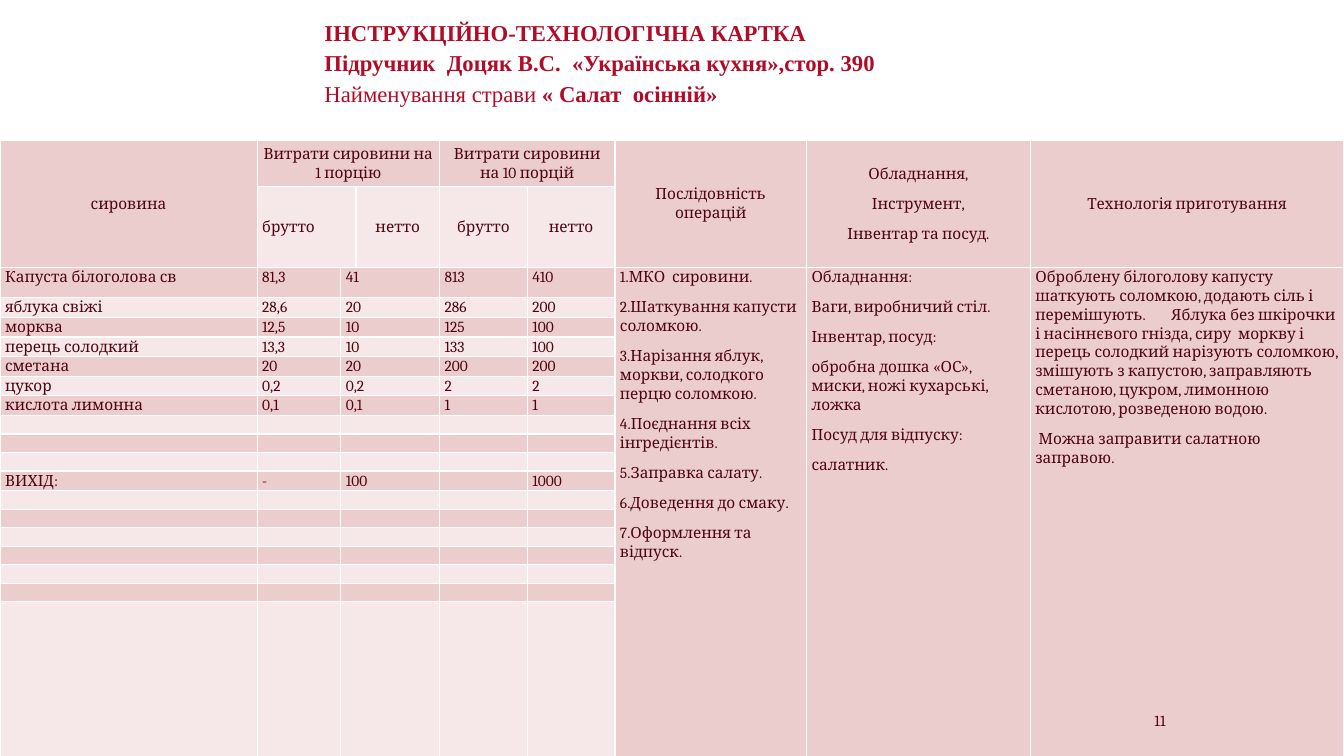
from dataclasses import dataclass

import pptx
import pptx.dml.color
import pptx.enum.text
import pptx.oxml.ns
import pptx.table
import pptx.text.text
import pptx.util
from lxml import etree

Inches = pptx.util.Inches
Pt = pptx.util.Pt
Align = pptx.enum.text.PP_ALIGN
Anchor = pptx.enum.text.MSO_ANCHOR
qn = pptx.oxml.ns.qn


@dataclass(frozen=True)
class Theme:
    title: str = "B10C27"
    ink: str = "4D0511"
    dark: str = "ECCDCD"
    light: str = "F6E8E8"
    line: str = "FFFFFF"
    serif: str = "Times New Roman"
    body: str = "Cambria"
    big: float = 16.2
    small: float = 11


@dataclass(frozen=True)
class Part:
    text: str
    bold: bool = False


@dataclass(frozen=True)
class Head:
    text: str
    row: int
    col: int
    rows: int = 1
    cols: int = 1
    align: Align = Align.CENTER


@dataclass(frozen=True)
class Column:
    col: int
    text: str


THEME = Theme()
WIDTHS = (2.55, 0.83, 0.15, 0.83, 0.87, 0.87, 1.9, 2.22, 3.11)
HEIGHTS = (0.46, 0.78, 0.3) + (0.18,) * 16 + (1.57,)
TAB = 1.35  # gap inside the method text

TITLE = (
    Part("ІНСТРУКЦІЙНО-ТЕХНОЛОГІЧНА КАРТКА\vПідручник  Доцяк В.С.  «Українська кухня»,стор. 390\v", True),
    Part("Найменування страви"),
    Part(" « Салат  осінній»", True),
)

HEADS = (
    Head("сировина", 0, 0, rows=2),
    Head("Витрати сировини на 1 порцію", 0, 1, cols=3),
    Head("Витрати сировини на 10 порцій", 0, 4, cols=2),
    Head("Послідовність операцій", 0, 6, rows=2),
    Head("Обладнання,\nІнструмент,\nІнвентар та посуд.", 0, 7, rows=2),
    Head("Технологія приготування", 0, 8, rows=2),
    Head("брутто", 1, 1, cols=2, align=Align.LEFT),
    Head("нетто", 1, 3),
    Head("брутто", 1, 4),
    Head("нетто", 1, 5),
)

# Name, then gross and net for 1 and for 10 servings
FOODS = {
    2: ("Капуста білоголова св", "81,3", "41", "813", "410"),
    3: ("яблука свіжі", "28,6", "20", "286", "200"),
    4: ("морква", "12,5", "10", "125", "100"),
    5: ("перець солодкий", "13,3", "10", "133", "100"),
    6: ("сметана", "20", "20", "200", "200"),
    7: ("цукор", "0,2", "0,2", "2", "2"),
    8: ("кислота лимонна", "0,1", "0,1", "1", "1"),
    12: ("ВИХІД:", "-", "100", "", "1000"),
}
FOOD_COLS = (0, 1, 2, 4, 5)

COLUMNS = (
    Column(6, "1.МКО  сировини.\n2.Шаткування капусти соломкою.\n"
              "3.Нарізання яблук, моркви, солодкого перцю соломкою.\n"
              "4.Поєднання всіх інгредієнтів.\n5.Заправка салату.\n"
              "6.Доведення до смаку.\n7.Оформлення та відпуск."),
    Column(7, "Обладнання:\nВаги, виробничий стіл.\nІнвентар, посуд:\n"
              "обробна дошка «ОС», миски, ножі кухарські, ложка\n"
              "Посуд для відпуску:\nсалатник."),
    Column(8, "Оброблену білоголову капусту шаткують соломкою, додають сіль і "
              "перемішують.\tЯблука без шкірочки і насіннєвого гнізда, сиру  моркву і "
              "перець солодкий нарізують соломкою, змішують з капустою, заправляють "
              "сметаною, цукром, лимонною кислотою, розведеною водою.\n"
              " Можна заправити салатною заправою."),
)


def write(frame: pptx.text.text.TextFrame, text: str | tuple[Part, ...], *,
          size: float = THEME.small, font: str = THEME.body, color: str = THEME.ink,
          align: Align = Align.LEFT, lead: float = 1.06, after: float = 8) -> None:
    """Fill a frame; a newline starts a paragraph, a vertical tab a line."""
    frame.word_wrap = True
    paras = [(Part(line),) for line in text.split("\n")] if isinstance(text, str) else [text]
    for num, parts in enumerate(paras):
        para = frame.add_paragraph() if num else frame.paragraphs[0]
        para.alignment, para.line_spacing, para.space_after = align, lead, Pt(after)
        if any("\t" in part.text for part in parts):
            tabs = etree.SubElement(para._p.get_or_add_pPr(), qn("a:tabLst"))
            etree.SubElement(tabs, qn("a:tab"), pos=str(Inches(TAB)), algn="l")
        if not any(part.text for part in parts):
            # An empty cell keeps the height of one line of body type
            end = etree.SubElement(para._p, qn("a:endParaRPr"), sz=str(round(size * 100)))
            etree.SubElement(end, qn("a:latin"), typeface=font)
            continue
        for part in parts:
            for step, line in enumerate(part.text.split("\v")):
                if step:
                    para.add_line_break()
                if line:
                    run = para.add_run()
                    run.text = line
                    run.font.size, run.font.name, run.font.bold = Pt(size), font, part.bold
                    run.font.color.rgb = pptx.dml.color.RGBColor.from_string(color)


def paint(cell: pptx.table._Cell, color: str) -> None:
    """Set the fill, margins and white borders of a cell."""
    cell.fill.solid()
    cell.fill.fore_color.rgb = pptx.dml.color.RGBColor.from_string(color)
    cell.margin_left = cell.margin_right = Inches(0.05)
    cell.margin_top = cell.margin_bottom = 0
    props = cell._tc.get_or_add_tcPr()
    for spot, side in enumerate(("lnL", "lnR", "lnT", "lnB")):
        edge = etree.Element(qn(f"a:{side}"), w=str(Pt(1)))
        fill = etree.SubElement(edge, qn("a:solidFill"))
        etree.SubElement(fill, qn("a:srgbClr"), val=THEME.line)
        props.insert(spot, edge)


def add_text(slide, box: tuple[float, float, float, float],
             text: str | tuple[Part, ...], **style) -> pptx.text.text.TextFrame:
    frame = slide.shapes.add_textbox(*map(Inches, box)).text_frame
    frame.margin_top = frame.margin_bottom = 0
    write(frame, text, **style)
    return frame


def add_card(slide) -> None:
    table = slide.shapes.add_table(
        len(HEIGHTS), len(WIDTHS), 0, Inches(1.39),
        Inches(sum(WIDTHS)), Inches(sum(HEIGHTS))).table
    table.first_row = table.horz_banding = False
    for col, width in zip(table.columns, WIDTHS):
        col.width = Inches(width)
    for row, height in zip(table.rows, HEIGHTS):
        row.height = Inches(height)

    # Bands on the left, one dark tone in the three text columns
    for row in range(len(HEIGHTS)):
        for col in range(len(WIDTHS)):
            dark = row % 2 == 0 or col > 5
            paint(table.cell(row, col), THEME.dark if dark else THEME.light)

    # Header cells
    for head in HEADS:
        cell = table.cell(head.row, head.col)
        if head.rows * head.cols > 1:
            cell.merge(table.cell(head.row + head.rows - 1, head.col + head.cols - 1))
        cell.vertical_anchor = Anchor.MIDDLE
        write(cell.text_frame, head.text, align=head.align)

    # Foods and their amounts
    for row in range(2, len(HEIGHTS)):
        table.cell(row, 2).merge(table.cell(row, 3))
        for col, text in zip(FOOD_COLS, FOODS.get(row, ("",) * 5)):
            write(table.cell(row, col).text_frame, text)

    # Steps, tools and method
    for part in COLUMNS:
        cell = table.cell(2, part.col)
        cell.merge(table.cell(len(HEIGHTS) - 1, part.col))
        write(cell.text_frame, part.text)


def main() -> None:
    deck = pptx.Presentation()
    deck.slide_width, deck.slide_height = Inches(13.33), Inches(7.5)
    slide = deck.slides.add_slide(deck.slide_layouts[6])
    # Title
    add_text(slide, (3.12, 0.16, 8.54, 0.9), TITLE, size=THEME.big,
             font=THEME.serif, color=THEME.title, lead=1.11, after=0)
    # Recipe table
    add_card(slide)
    # Page number
    page = add_text(slide, (10.66, 7, 1, 0.3), "11", align=Align.RIGHT, lead=1, after=0)
    page.vertical_anchor = Anchor.MIDDLE
    deck.save("out.pptx")


if __name__ == "__main__":
    main()
